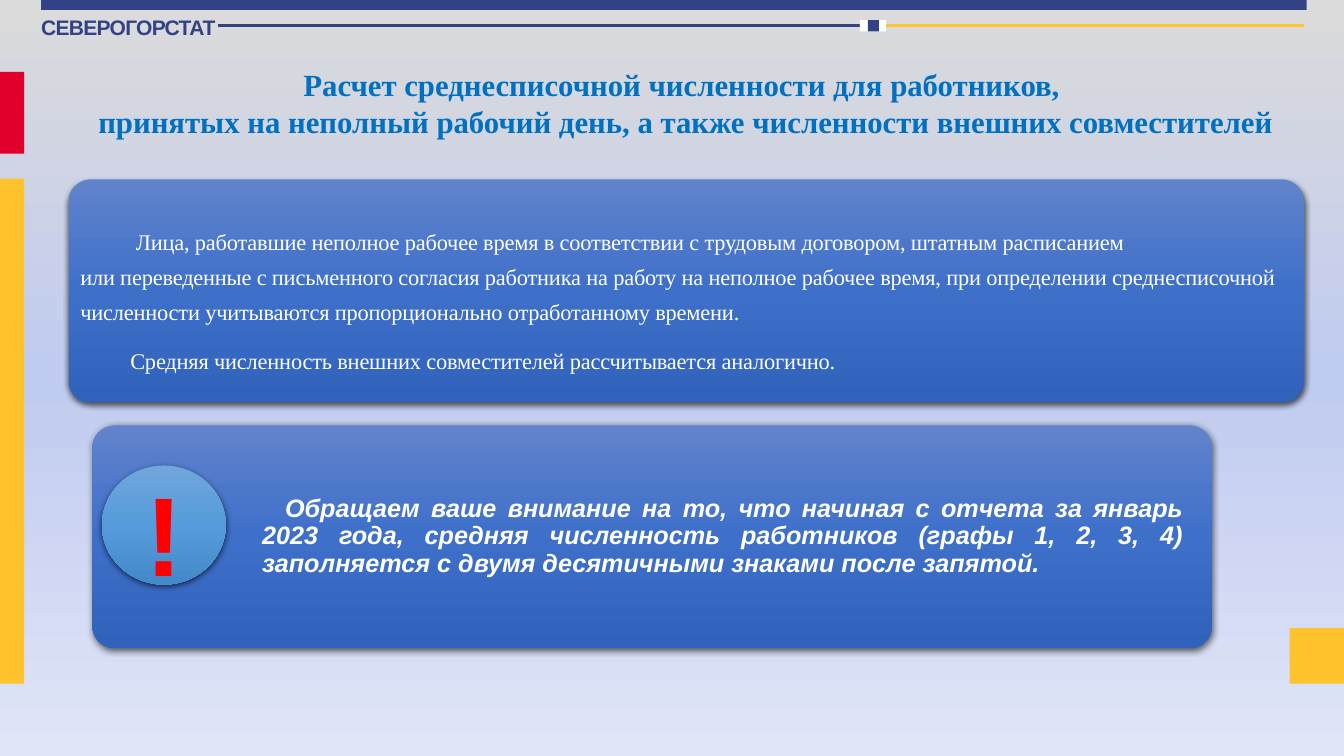
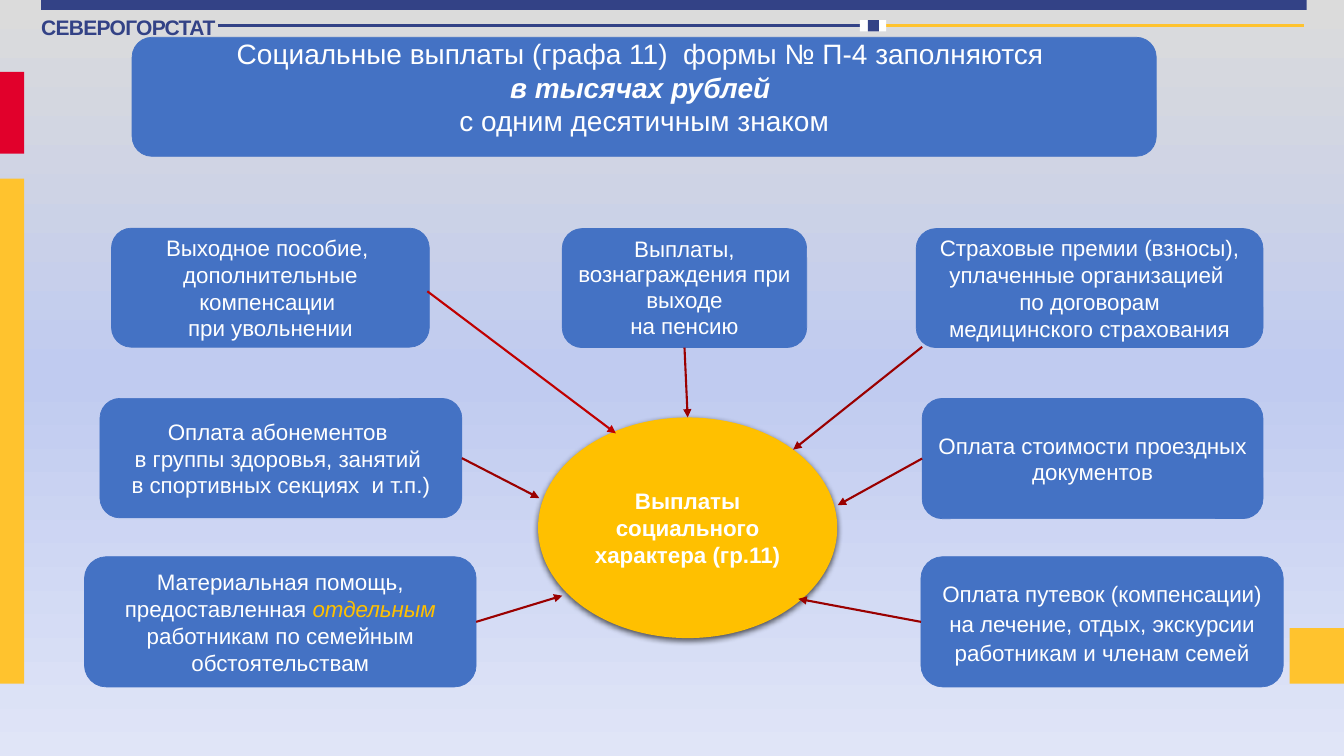
from dataclasses import dataclass

from lxml import etree
from pptx import Presentation
from pptx import util as u
from pptx.dml.color import RGBColor
from pptx.enum import shapes, text
from pptx.oxml import ns


@dataclass(frozen=True)
class Theme:
    navy: str = "334286"
    red: str = "E1002B"
    yellow: str = "FFC32E"
    white: str = "FFFFFF"
    title: str = "0070C0"
    card: str = "4472C4"
    gold: str = "FFC000"
    alert: str = "FF0000"
    arrow: str = "9A0000"
    bright_arrow: str = "C00000"
    background: tuple = ("DBDBDB", "C0CBF0", "E0E5F7")
    panel: tuple = ("6183CB", "3E70CA", "3062BB")
    badge: tuple = ("71A6DB", "559BDB", "448ACA")
    sans: str = "Arial"
    serif: str = "Times New Roman"
    brand_size: float = 15
    body_size: float = 16
    note_size: float = 18
    heading_size: float = 20
    title_size: float = 22
    badge_size: float = 80


THEME = Theme()
KIND = shapes.MSO_SHAPE
ALIGN = text.PP_ALIGN
ANCHOR = text.MSO_ANCHOR
TOP, LEFT, BOTTOM, RIGHT = range(4)

# All boxes are (left, top, width, height) in centimetres.
BRAND = "СЕВЕРОГОРСТАТ"
BRAND_BOX = (1.04, 0.33, 4.52, 0.69)
BANDS = [
    ((1.04, 0, 31.89, 0.25), THEME.navy),
    ((0, 1.81, 0.61, 2.06), THEME.red),
    ((0, 4.5, 0.61, 12.73), THEME.yellow),
    ((32.5, 15.83, 1.37, 1.4), THEME.yellow),
]
RULE_TOP = 0.64
RULES = [(5.5, 21.69, THEME.navy), (22.15, 32.87, THEME.yellow)]
RULE_MARKS = [
    ((21.67, 0.51, 0.66, 0.28), THEME.white),
    ((21.87, 0.51, 0.28, 0.28), THEME.navy),
]

HEADCOUNT_TITLE = [
    "Расчет среднесписочной численности для работников, \n"
    "принятых на неполный рабочий день, а также численности внешних совместителей"
]
HEADCOUNT_RULES = [
    "Лица, работавшие неполное рабочее время в соответствии с трудовым договором, "
    "штатным расписанием\nили переведенные с письменного согласия работника на работу "
    "на неполное рабочее время, при определении среднесписочной численности "
    "учитываются пропорционально отработанному времени.",
    "Средняя численность внешних совместителей рассчитывается аналогично.",
]
HEADCOUNT_NOTE = [
    "Обращаем ваше внимание на то, что начиная с отчета за январь 2023 года, "
    "средняя численность работников (графы 1, 2, 3, 4) заполняется с двумя "
    "десятичными знаками после запятой."
]

PAYMENTS_TITLE = [[
    ("Социальные выплаты (графа 11)  формы № П-4 заполняются \n", {}),
    ("в тысячах рублей \n", {"bold": True, "italic": True}),
    ("с одним десятичным знаком", {}),
]]
PAYMENTS_HUB = ["Выплаты социального характера (гр.11)"]
# paragraphs, box, line spacing, arrow start (a side or a point), arrow end, arrow colour
PAYMENTS = [
    (["Выплаты, вознаграждения при выходе\nна пенсию"],
     (14.17, 5.76, 6.16, 3), 0.95, BOTTOM, (17.35, 10.52), THEME.arrow),
    (["Страховые премии (взносы), уплаченные организацией \n"
      "по договорам\nмедицинского страхования"],
     (23.09, 5.76, 8.74, 3), 1.0, (23.24, 8.74), (19.99, 11.33), THEME.arrow),
    (["Оплата стоимости проездных документов"],
     (23.24, 10.04, 8.59, 3.03), 1.0, LEFT, (21.11, 12.73), THEME.arrow),
    (["Оплата путевок (компенсации) на лечение, отдых, экскурсии "
      "работникам и членам семей"],
     (23.21, 14.03, 9.13, 3.28), 1.1, LEFT, (20.12, 15.09), THEME.arrow),
    ([[("Материальная помощь, предоставленная ", {}),
       ("отдельным ", {"color": THEME.gold, "italic": True}),
       ("работникам по семейным обстоятельствам", {})]],
     (2.13, 14.03, 9.87, 3.28), 1.0, RIGHT, (14.17, 15.01), THEME.arrow),
    (["Оплата абонементов \nв группы здоровья, занятий \n"
      "в спортивных секциях  и т.п.)"],
     (2.52, 10.04, 9.12, 3.01), 1.0, RIGHT, (13.59, 12.55), THEME.arrow),
    (["Выходное пособие, \nдополнительные компенсации \nпри увольнении"],
     (2.81, 5.75, 8.01, 3), 1.0, (10.77, 7.34), (15.52, 10.92), THEME.bright_arrow),
]


def cm(values):
    return [u.Cm(value) for value in values]


def add_xml(parent, tag, **attributes):
    return etree.SubElement(parent, ns.qn(tag), attributes)


def fill_gradient(owner, fill, colors):
    """Fill from top to bottom with evenly spaced colours."""
    fill.gradient()
    fill.gradient_angle = 270
    stops = next(owner.element.iter(ns.qn("a:gsLst")))
    for stop in list(stops):
        stops.remove(stop)
    for index, color in enumerate(colors):
        position = str(round(100000 * index / (len(colors) - 1)))
        add_xml(add_xml(stops, "a:gs", pos=position), "a:srgbClr", val=color)


def style_run(run, font=THEME.sans, size=THEME.body_size, color=THEME.white,
              bold=False, italic=False, tracking=None):
    run.font.name = font
    run.font.size = u.Pt(size)
    run.font.color.rgb = RGBColor.from_string(color)
    run.font.bold, run.font.italic = bold, italic
    if tracking:
        run.font._element.set("spc", str(round(tracking * 100)))


def write_text(shape, paragraphs, align=ALIGN.CENTER, anchor=ANCHOR.MIDDLE, wrap=True,
               margins=(0.25, 0.13, 0.25, 0.13), line_spacing=1.0, gap=0, indents=(0,),
               **run_format):
    """Each paragraph is a string or a list of (text, run format) pairs."""
    frame = shape.text_frame
    frame.auto_size = text.MSO_AUTO_SIZE.NONE
    frame.word_wrap = wrap
    frame.vertical_anchor = anchor
    (frame.margin_left, frame.margin_top,
     frame.margin_right, frame.margin_bottom) = cm(margins)
    for index, (runs, indent) in enumerate(zip(paragraphs, indents)):
        paragraph = frame.add_paragraph() if index else frame.paragraphs[0]
        paragraph.alignment = align
        paragraph.line_spacing = line_spacing
        paragraph.space_before = u.Pt(gap if index else 0)
        if indent:
            paragraph._p.get_or_add_pPr().set("indent", str(u.Cm(indent)))
        for content, changes in [(runs, {})] if isinstance(runs, str) else runs:
            for line_number, line in enumerate(content.split("\n")):
                if line_number:
                    paragraph.add_line_break()
                if line:
                    run = paragraph.add_run()
                    run.text = line
                    style_run(run, **{**run_format, **changes})


def add_block(slide, kind, box, fill, outline=None, shadow=False, corner=None):
    """Add a shape; a tuple of colours as fill makes a gradient."""
    shape = slide.shapes.add_shape(kind, *cm(box))
    if corner is not None:
        shape.adjustments[0] = corner
    if isinstance(fill, tuple):
        fill_gradient(shape, shape.fill, fill)
    else:
        shape.fill.solid()
        shape.fill.fore_color.rgb = RGBColor.from_string(fill)
    if outline:
        shape.line.color.rgb = RGBColor.from_string(outline)
        shape.line.width = u.Pt(0.5)
    else:
        shape.line.fill.background()
    shape.shadow.inherit = False
    if shadow:
        effects = shape.element.spPr.find(ns.qn("a:effectLst"))
        outer = add_xml(effects, "a:outerShdw", blurRad=str(u.Pt(4.5)),
                        dist=str(u.Pt(1.5)), dir="5400000", rotWithShape="0")
        add_xml(add_xml(outer, "a:srgbClr", val="000000"), "a:alpha", val="63000")
    return shape


def add_card(slide, box):
    return add_block(slide, KIND.ROUNDED_RECTANGLE, box, THEME.card, THEME.card)


def add_panel(slide, box):
    return add_block(slide, KIND.ROUNDED_RECTANGLE, box, THEME.panel,
                     shadow=True, corner=0.1)


def add_line(slide, start, end, color, width, arrow=False):
    line = slide.shapes.add_connector(shapes.MSO_CONNECTOR.STRAIGHT, *cm(start + end))
    line.line.color.rgb = RGBColor.from_string(color)
    line.line.width = u.Pt(width)
    if arrow:
        add_xml(line.line._get_or_add_ln(), "a:tailEnd", type="triangle")
    add_xml(line.element.spPr, "a:effectLst")
    return line


def add_slide(presentation):
    """Add a title-only slide with the shared bands, rules and brand."""
    slide = presentation.slides.add_slide(presentation.slide_layouts[5])
    brand = slide.shapes.add_textbox(*cm(BRAND_BOX))
    write_text(brand, [BRAND], align=ALIGN.LEFT, anchor=ANCHOR.TOP, wrap=False,
               margins=(0, 0.03, 0, 0), size=THEME.brand_size, color=THEME.navy,
               bold=True, tracking=-0.5)
    for left, right, color in RULES:
        add_line(slide, (left, RULE_TOP), (right, RULE_TOP), color, 2)
    for box, color in BANDS + RULE_MARKS:
        add_block(slide, KIND.RECTANGLE, box, color)
    return slide


def place_title(slide, paragraphs, box, **run_format):
    """Format the title and bring it in front of what is already there."""
    title = slide.shapes.title
    title.left, title.top, title.width, title.height = cm(box)
    write_text(title, paragraphs, anchor=ANCHOR.TOP, **run_format)
    title.element.getparent().append(title.element)


def build_headcount(presentation):
    slide = add_slide(presentation)
    place_title(slide, HEADCOUNT_TITLE, (1.13, 1.52, 32.28, 2.69), font=THEME.serif,
                size=THEME.title_size, color=THEME.title, bold=True)
    rules = add_panel(slide, (1.73, 4.52, 31.13, 5.62))
    write_text(rules, HEADCOUNT_RULES, align=ALIGN.LEFT, anchor=ANCHOR.TOP,
               margins=(0.13, 0.86, 0.4, 0), line_spacing=1.3, gap=10,
               indents=(1.4, 1.26), font=THEME.serif, tracking=-0.1)
    note = add_panel(slide, (2.33, 10.72, 28.21, 5.61))
    write_text(note, HEADCOUNT_NOTE, align=ALIGN.JUSTIFY, margins=(4.11, 0.18, 0.55, 0.18),
               line_spacing=0.9, indents=(0.58,), size=THEME.note_size, bold=True,
               italic=True)
    badge = add_block(slide, KIND.FLOWCHART_CONNECTOR, (2.57, 11.73, 3.12, 3),
                      THEME.badge, shadow=True)
    write_text(badge, ["!"], margins=(0, 0.36, 0, 0), size=THEME.badge_size,
               color=THEME.alert, bold=True)


def build_payments(presentation):
    slide = add_slide(presentation)
    add_card(slide, (3.33, 0.94, 25.81, 3))
    place_title(slide, PAYMENTS_TITLE, (3.23, 0.79, 26.01, 2.69), size=THEME.heading_size)
    hub = add_block(slide, KIND.OVAL, (13.56, 10.52, 7.54, 5.56), THEME.gold, shadow=True)
    write_text(hub, PAYMENTS_HUB, bold=True)
    for paragraphs, box, spacing, start, end, color in PAYMENTS:
        card = add_card(slide, box)
        write_text(card, paragraphs, line_spacing=spacing)
        joined = isinstance(start, int)
        arrow = add_line(slide, end if joined else start, end, color, 1.5, arrow=True)
        if joined:
            arrow.begin_connect(card, start)
        if start == BOTTOM:
            arrow.end_connect(hub, TOP)


def main():
    presentation = Presentation()
    presentation.slide_width, presentation.slide_height = cm((33.87, 19.05))
    master = presentation.slide_master
    fill_gradient(master, master.background.fill, THEME.background)
    build_headcount(presentation)
    build_payments(presentation)
    presentation.save("out.pptx")


if __name__ == "__main__":
    main()
